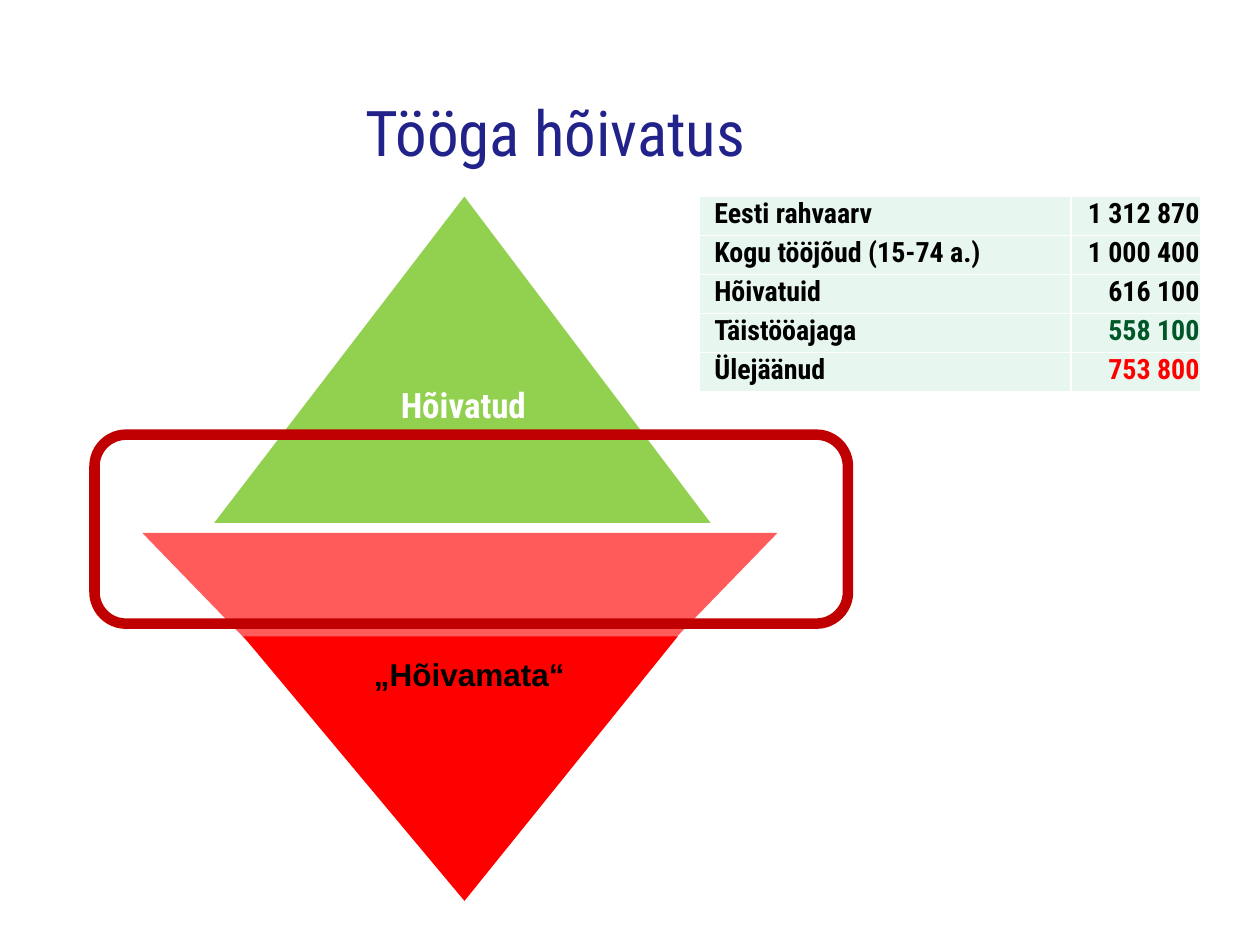
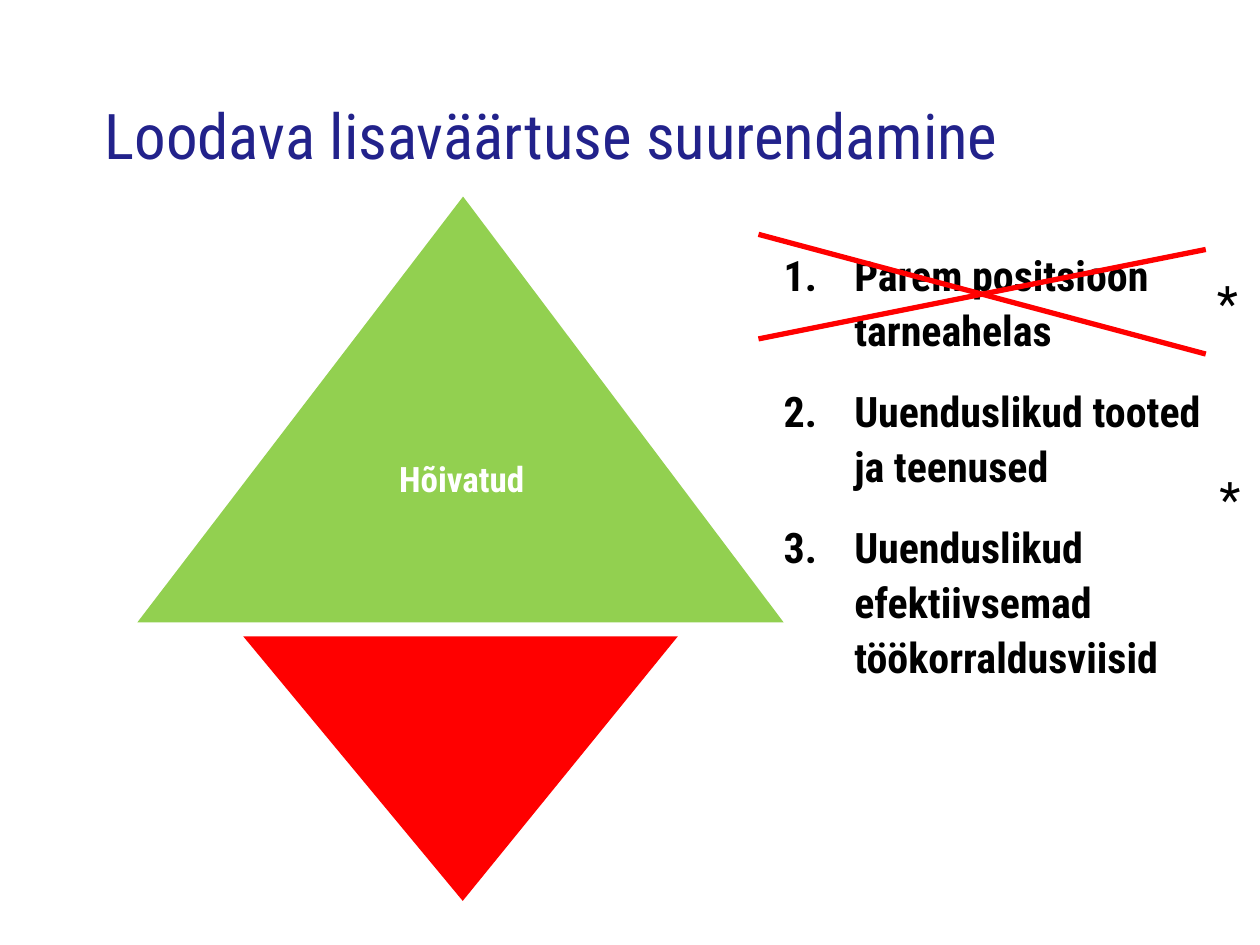
from lxml.etree import SubElement
from pptx import Presentation
from pptx.dml.color import RGBColor
from pptx.enum.shapes import MSO_CONNECTOR, MSO_SHAPE
from pptx.enum.text import MSO_ANCHOR, MSO_AUTO_SIZE, PP_ALIGN
from pptx.oxml.ns import qn
from pptx.util import Inches, Pt

FONT = "Roboto Condensed"
COLORS = {
    "title": "22228B", "text": "000000", "white": "FFFFFF",
    "employed": "92D050", "idle": "FF0000", "idle_light": "FF5B5B",
    "frame": "C00000", "cell": "E7F6EF", "full_time": "005828",
}

# label, value, colour of the value
WORKFORCE = [
    ("Eesti rahvaarv", "1 312 870", "text"),
    ("Kogu tööjõud (15-74 a.)", "1 000 400", "text"),
    ("Hõivatuid", "616 100", "text"),
    ("Täistööajaga", "558 100", "full_time"),
    ("Ülejäänud", "753 800", "idle"),
]
TABLE_COLS = (2.95, 1.03)
TABLE_ROW = 0.31

WAYS = [
    "Parem positsioon tarneahelas",
    "Uuenduslikud tooted ja teenused",
    "Uuenduslikud efektiivsemad töökorraldusviisid",
]
CROSS = [((6.02, 1.86), (9.57, 2.81)), ((6.02, 2.69), (9.57, 1.98))]
STARS = [(9.56, 2.11), (9.58, 3.67)]
EMPLOYED_LABEL = "Hõivatud"
IDLE_BOX = (1.93, 5.05, 3.45, 2.1)


def rgb(name):
    return RGBColor.from_string(COLORS[name])


def style(p, size, color="text", bold=False, font=FONT):
    for r in p.runs:
        r.font.size, r.font.bold, r.font.name = Pt(size), bold, font
        r.font.color.rgb = rgb(color)


def set_margins(tf, left=0, top=0, right=0, bottom=0):
    tf.margin_left, tf.margin_top = Inches(left), Inches(top)
    tf.margin_right, tf.margin_bottom = Inches(right), Inches(bottom)


def add_text_area(s, box):
    tf = s.shapes.add_textbox(*map(Inches, box)).text_frame
    tf.word_wrap = True
    set_margins(tf)
    return tf


def add_title(s, text, box, align):
    tf = add_text_area(s, box)
    tf.vertical_anchor = MSO_ANCHOR.MIDDLE
    tf.text = text
    p = tf.paragraphs[0]
    p.alignment, p.line_spacing = align, 0.88
    style(p, 36, "title")


def add_label(s, text, box, size, **font):
    """Add a one-line text box that fits its text."""
    tf = s.shapes.add_textbox(*map(Inches, box)).text_frame
    tf.word_wrap = False
    tf.auto_size = MSO_AUTO_SIZE.SHAPE_TO_FIT_TEXT
    tf.text = text
    style(tf.paragraphs[0], size, **font)


def add_triangle(s, box, color, apex=0.5, down=False):
    sp = s.shapes.add_shape(MSO_SHAPE.ISOSCELES_TRIANGLE, *map(Inches, box))
    sp.shadow.inherit = False
    sp.adjustments[0] = apex
    sp.rotation = 180 if down else 0
    sp.fill.solid()
    sp.fill.fore_color.rgb = rgb(color)
    sp.line.fill.background()
    return sp


def add_employed(s, box):
    tf = add_triangle(s, box, "employed", 0.504).text_frame
    tf.vertical_anchor = MSO_ANCHOR.MIDDLE
    set_margins(tf, 0.1, 0.05, 0.1, 0.64)
    tf.text = EMPLOYED_LABEL
    tf.paragraphs[0].alignment = PP_ALIGN.CENTER
    style(tf.paragraphs[0], 20, "white", bold=True)


def add_cell_borders(cell):
    tc_pr = cell._tc.get_or_add_tcPr()
    for side in ("lnL", "lnR", "lnT", "lnB"):
        ln = SubElement(tc_pr, qn("a:" + side), w=str(Pt(1)))
        fill = SubElement(ln, qn("a:solidFill"))
        SubElement(fill, qn("a:srgbClr"), val=COLORS["white"])


def add_workforce_table(s, left, top):
    table = s.shapes.add_table(
        len(WORKFORCE), 2, Inches(left), Inches(top),
        Inches(sum(TABLE_COLS)), Inches(TABLE_ROW * len(WORKFORCE))).table
    for col, width in zip(table.columns, TABLE_COLS):
        col.width = Inches(width)
    for i, (label, value, color) in enumerate(WORKFORCE):
        table.rows[i].height = Inches(TABLE_ROW)
        columns = [(label, "text", PP_ALIGN.LEFT, 0.12),
                   (value, color, PP_ALIGN.RIGHT, 0.01)]
        for j, (text, text_color, align, indent) in enumerate(columns):
            cell = table.cell(i, j)
            add_cell_borders(cell)
            cell.fill.solid()
            cell.fill.fore_color.rgb = rgb("cell")
            set_margins(cell, indent, 0.01, 0.01)
            cell.text = text
            p = cell.text_frame.paragraphs[0]
            p.alignment = align
            style(p, 16, text_color, bold=True)


def add_frame(s, box):
    sp = s.shapes.add_shape(MSO_SHAPE.ROUNDED_RECTANGLE, *map(Inches, box))
    sp.shadow.inherit = False
    sp.fill.background()
    sp.line.color.rgb = rgb("frame")
    sp.line.width = Pt(6)


def add_numbered_list(s, items, box):
    tf = add_text_area(s, box)
    tf.text = "\n".join(items)
    for p in tf.paragraphs:
        p.line_spacing, p.space_after = 1.1, Pt(14.3)
        style(p, 24, bold=True)
        p_pr = p._p.get_or_add_pPr()
        p_pr.set("marL", str(Inches(0.56)))
        p_pr.set("indent", str(-Inches(0.56)))
        color = SubElement(p_pr, qn("a:buClr"))
        SubElement(color, qn("a:srgbClr"), val=COLORS["text"])
        SubElement(p_pr, qn("a:buAutoNum"), type="arabicPeriod")


def add_line(s, start, end):
    line = s.shapes.add_connector(MSO_CONNECTOR.STRAIGHT,
                                  *map(Inches, start + end))
    line.line.color.rgb = rgb("idle")
    line.line.width = Pt(3)
    SubElement(line._element.spPr, qn("a:effectLst"))


def build_employment(s):
    add_title(s, "Tööga hõivatus", (0.28, 0.6, 8.26, 0.96), PP_ALIGN.CENTER)
    add_employed(s, (1.7, 1.56, 3.94, 2.59))
    add_triangle(s, (1.13, 4.23, 5.04, 2.6), "idle_light", down=True)
    add_triangle(s, IDLE_BOX, "idle", 0.491, down=True)
    add_workforce_table(s, 5.55, 1.56)
    add_label(s, "„Hõivamata“", (2.87, 5.15, 1.73, 0.4), 18,
              bold=True, font="Arial")
    add_frame(s, (0.75, 3.45, 5.98, 1.5))


def build_added_value(s):
    add_title(s, "Loodava lisaväärtuse suurendamine",
              (0.83, 0.52, 8.91, 1.18), PP_ALIGN.LEFT)
    add_employed(s, (1.09, 1.56, 5.13, 3.38))
    add_triangle(s, IDLE_BOX, "idle", 0.495, down=True)
    add_numbered_list(s, WAYS, (6.22, 1.94, 3.51, 4.76))
    for start, end in CROSS:
        add_line(s, start, end)
    for left, top in STARS:
        add_label(s, "*", (left, top, 0.4, 0.57), 28)


def main():
    prs = Presentation()
    prs.slide_width, prs.slide_height = Inches(10), Inches(7.5)
    for build in (build_employment, build_added_value):
        build(prs.slides.add_slide(prs.slide_layouts[6]))
    prs.save("out.pptx")


if __name__ == "__main__":
    main()
